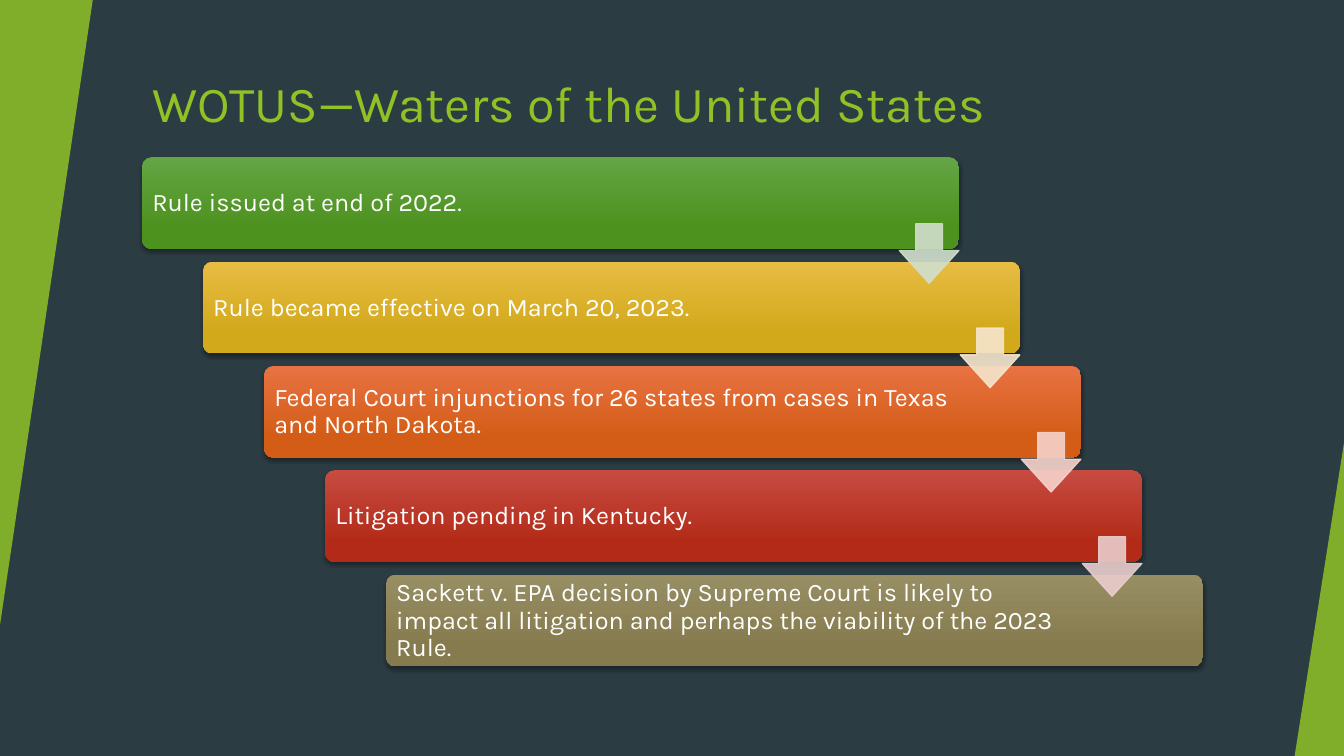
from lxml.etree import SubElement
from pptx import Presentation
from pptx.dml.color import RGBColor
from pptx.enum.shapes import MSO_SHAPE
from pptx.enum.text import MSO_ANCHOR
from pptx.oxml.ns import qn
from pptx.util import Inches, Pt


def color(text):
    return RGBColor.from_string(text)


class Deck:
    """Holds the style and the current slide, and draws each kind of element."""

    font = "Karla"
    back = "2C3C43"
    green = "90C226"
    white = "FFFFFF"

    def __init__(self, show):
        self.slide = show.slides.add_slide(show.slide_layouts[6])
        fill = self.slide.background.fill
        fill.solid()
        fill.fore_color.rgb = color(self.back)

    def shape(self, kind, box, *adjust):
        item = self.slide.shapes.add_shape(kind, *map(Inches, box))
        item.shadow.inherit = False
        item.line.fill.background()
        for i, value in enumerate(adjust):
            item.adjustments[i] = value
        return item

    def paint(self, item, tint, alpha):
        item.fill.solid()
        item.fill.fore_color.rgb = color(tint)
        for node in item._element.spPr.iter(qn("a:srgbClr")):
            SubElement(node, qn("a:alpha"), val=str(alpha * 1000))

    def wedge(self, box, turn=0):
        item = self.shape(MSO_SHAPE.ISOSCELES_TRIANGLE, box, 1)
        item.rotation = turn
        self.paint(item, self.green, 85)

    def card(self, box, top, base):
        item = self.shape(MSO_SHAPE.ROUNDED_RECTANGLE, box, 0.1)
        item.fill.gradient()
        item.fill.gradient_angle = 270
        for stop, tint, place in zip(item.fill.gradient_stops, (top, base), (0, 0.78)):
            stop.color.rgb = color(tint)
            stop.position = place
        effect = item._element.spPr.find(qn("a:effectLst"))
        shade = SubElement(effect, qn("a:outerShdw"), blurRad=str(Pt(3)),
                           dist=str(Pt(2)), dir="5400000", rotWithShape="0")
        black = SubElement(shade, qn("a:srgbClr"), val="000000")
        SubElement(black, qn("a:alpha"), val="35000")

    def arrow(self, box, tint):
        item = self.shape(MSO_SHAPE.DOWN_ARROW, box, 0.45, 0.55)
        item.line.color.rgb = color(tint)
        item.line.width = Pt(1)
        self.paint(item, tint, 90)

    def text(self, box, words, size, tint, anchor, inset, space=1.0):
        frame = self.slide.shapes.add_textbox(*map(Inches, box)).text_frame
        frame.word_wrap = True
        frame.vertical_anchor = anchor
        frame.margin_left = frame.margin_right = Inches(inset[0])
        frame.margin_top = frame.margin_bottom = Inches(inset[1])
        frame.text = words
        line = frame.paragraphs[0]
        line.line_spacing = space
        font = line.runs[0].font
        font.name = self.font
        font.size = Pt(size)
        font.color.rgb = color(tint)


STEPS = [
    ("Rule issued at end of 2022.", "63A545", "4D921E", "D1DFCD"),
    ("Rule became effective on March 20, 2023.", "E7BC43", "D2A91B", "F5E6CD"),
    ("Federal Court injunctions for 26 states from cases in Texas and North Dakota.",
     "E87242", "D35D16", "F6D3CC"),
    ("Litigation pending in Kentucky.", "C74B42", "B32B18", "EACDCD"),
    ("Sackett v. EPA decision by Supreme Court is likely to impact all litigation "
     "and perhaps the viability of the 2023 Rule.", "988E64", "857B4E", None),
]
LEFT, TOP = 1.41, 1.56
RIGHT, DOWN = 0.605, 1.035


def main():
    show = Presentation()
    show.slide_width = Inches(13.33)
    show.slide_height = Inches(7.5)
    deck = Deck(show)
    deck.text((LEFT, 0.67, 11.15, 1.2), "WOTUS—Waters of the United States",
              36, deck.green, MSO_ANCHOR.TOP, (0.1, 0.05))
    deck.wedge((0, 0, 0.92, 6.2), 180)
    deck.wedge((12.84, 4.39, 0.49, 3.11))
    spots = [(LEFT + i * RIGHT, TOP + i * DOWN) for i in range(len(STEPS))]
    for (x, y), (words, top, base, _) in zip(spots, STEPS):
        deck.card((x, y, 8.1, 0.91), top, base)
        wide = 7.01 if y == TOP else 6.85
        deck.text((x + 0.03, y + 0.03, wide, 0.86), words, 18, deck.white,
                  MSO_ANCHOR.MIDDLE, (0.07, 0.07), 0.9)
    for (x, y), (*_, tint) in zip(spots[:-1], STEPS):
        deck.arrow((x + 7.51, y + 0.66, 0.59, 0.59), tint)
    show.save("out.pptx")


if __name__ == "__main__":
    main()
